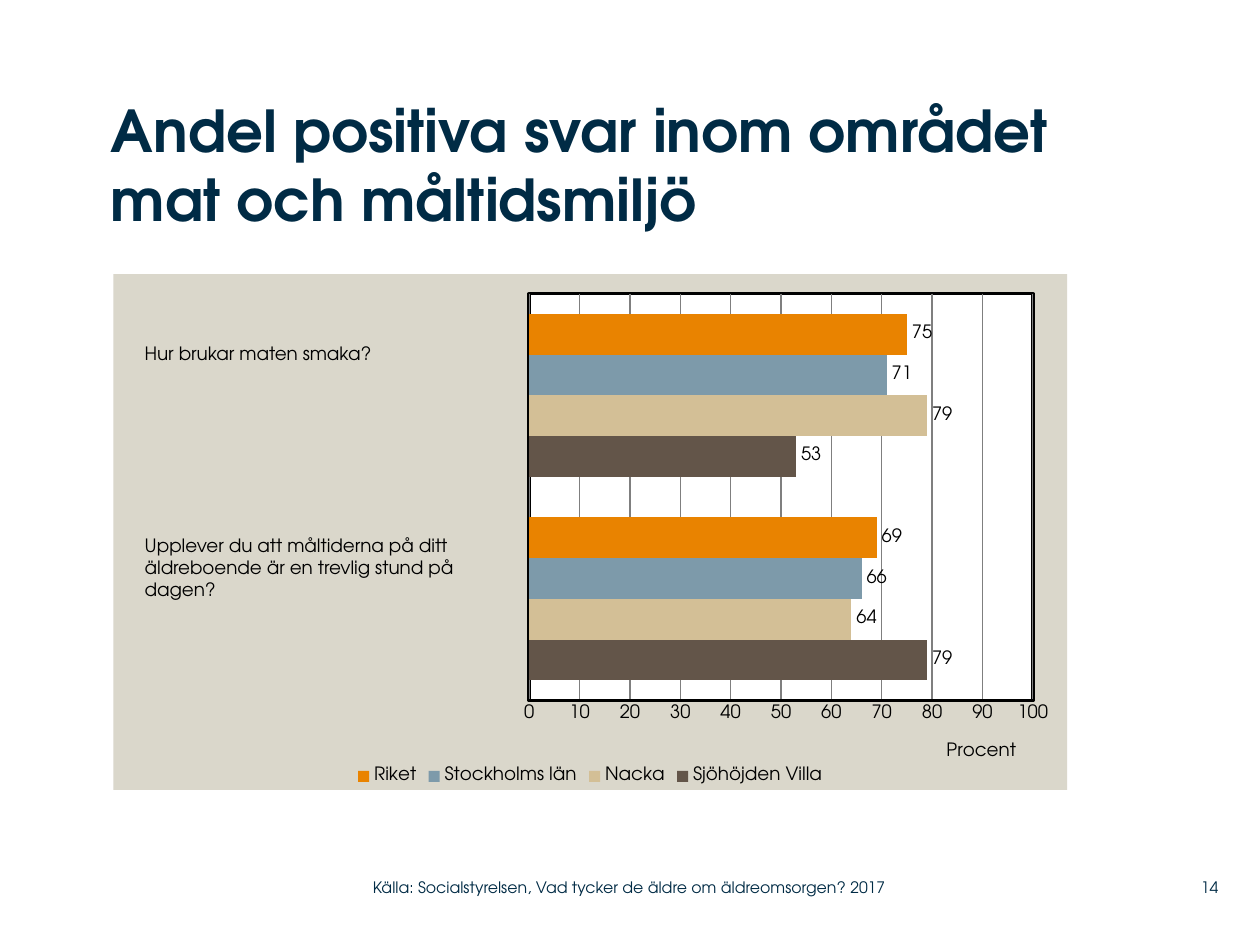
import pptx
import pptx.chart.data
import pptx.dml.color
import pptx.enum.chart
import pptx.enum.text
import pptx.oxml
import pptx.oxml.ns
import pptx.util

SLIDE_SIZE = (10, 7.5)

THEME = {
    "font": "TeX Gyre Adventor",
    "navy": "002B45",
    "black": "000000",
    "grid": "7F7F7F",
    "panel": "DAD7CB",
    "plot": "FFFFFF",
    "title_size": 33,
    "chart_size": 10.5,
    "footer_size": 9,
}

CATEGORIES = ["1", "2"]
SERIES = [
    ("Sjöhöjden Villa", (79, 53), "635549"),
    ("Nacka", (64, 79), "D3BF96"),
    ("Stockholms län", (66, 71), "7D9AAA"),
    ("Riket", (69, 75), "E98300"),
]
AXIS_TITLE = "Procent"
CHART_BOX = (0.09, 0.29, 0.757, 0.546)
PLOT_LAYOUT = {"x": 0.436, "y": 0.038, "w": 0.528, "h": 0.789}
AXIS_TITLE_LAYOUT = {"x": 0.87, "y": 0.9}

TITLE = {
    "text": "Andel positiva svar inom området mat och måltidsmiljö",
    "box": (0.088, 0.1, 0.842, 0.19),
    "size": "title_size", "color": "navy", "bold": True, "inset": 0,
}
QUESTIONS = [
    {"text": "Hur brukar maten smaka?", "box": (0.105, 0.356, 0.297, 0.037)},
    {"text": "Upplever du att måltiderna på ditt äldreboende är en trevlig stund på\ndagen?",
     "box": (0.105, 0.559, 0.293, 0.084)},
]
FOOTERS = [
    {"text": "14", "box": (0.92, 0.919, 0.047, 0.039),
     "align": pptx.enum.text.PP_ALIGN.RIGHT},
    {"text": "Källa: Socialstyrelsen, Vad tycker de äldre om äldreomsorgen? 2017",
     "box": (0.296, 0.919, 0.443, 0.039)},
]
FOOTER_STYLE = {"size": "footer_size", "color": "navy", "inset": 0,
                "anchor": pptx.enum.text.MSO_ANCHOR.MIDDLE}


def color(name):
    return pptx.dml.color.RGBColor.from_string(THEME.get(name, name))


def place(box):
    return [pptx.util.Inches(share * SLIDE_SIZE[index % 2])
            for index, share in enumerate(box)]


def style_font(font, size="chart_size", color_name="black", bold=False):
    font.name = THEME["font"]
    font.size = pptx.util.Pt(THEME[size])
    font.bold = bold
    font.color.rgb = color(color_name)


def add_text(slide, text, box, size="chart_size", color="black", bold=False,
             inset=None, anchor=pptx.enum.text.MSO_ANCHOR.TOP,
             align=pptx.enum.text.PP_ALIGN.LEFT):
    frame = slide.shapes.add_textbox(*place(box)).text_frame
    frame.word_wrap = True
    frame.vertical_anchor = anchor
    if inset is not None:
        frame.margin_left = frame.margin_right = pptx.util.Inches(inset)
        frame.margin_top = frame.margin_bottom = pptx.util.Inches(inset)
    frame.text = text
    for paragraph in frame.paragraphs:
        paragraph.alignment = align
        for run in paragraph.runs:
            style_font(run.font, size, color, bold)


def layout_xml(values, inner=False):
    target = '<c:layoutTarget val="inner"/>' if inner else ""
    modes = "".join(f'<c:{key}Mode val="edge"/>' for key in "xy")
    sizes = "".join(f'<c:{key} val="{value}"/>' for key, value in values.items())
    return pptx.oxml.parse_xml(
        f'<c:layout {pptx.oxml.ns.nsdecls("c")}><c:manualLayout>'
        f"{target}{modes}{sizes}</c:manualLayout></c:layout>")


def set_layout(parent, layout, index):
    for existing in parent.findall(pptx.oxml.ns.qn("c:layout")):
        parent.remove(existing)
    parent.insert(index, layout)


def area_properties(fill, outline):
    return pptx.oxml.parse_xml(
        f'<c:spPr {pptx.oxml.ns.nsdecls("c", "a")}>'
        f'<a:solidFill><a:srgbClr val="{THEME[fill]}"/></a:solidFill>{outline}</c:spPr>')


def style_areas(chart):
    space = chart._chartSpace
    plot_area = space.chart.plotArea
    set_layout(plot_area, layout_xml(PLOT_LAYOUT, inner=True), 0)
    border = (f'<a:ln w="{pptx.util.Pt(2)}"><a:solidFill>'
              f'<a:srgbClr val="{THEME["black"]}"/></a:solidFill></a:ln>')
    plot_area.append(area_properties("plot", border))
    space.chart.addnext(area_properties("panel", "<a:ln><a:noFill/></a:ln>"))


def style_value_axis(axis):
    axis.minimum_scale, axis.maximum_scale, axis.major_unit = 0, 100, 10
    axis.major_tick_mark = pptx.enum.chart.XL_TICK_MARK.NONE
    axis.minor_tick_mark = pptx.enum.chart.XL_TICK_MARK.NONE
    axis.format.line.color.rgb = color("black")
    axis.format.line.width = pptx.util.Pt(2)
    axis.has_major_gridlines = True
    axis.major_gridlines.format.line.color.rgb = color("grid")
    axis.major_gridlines.format.line.width = pptx.util.Pt(0.75)
    style_font(axis.tick_labels.font)
    frame = axis.axis_title.text_frame
    frame.text = AXIS_TITLE
    style_font(frame.paragraphs[0].runs[0].font)
    set_layout(axis.axis_title._element, layout_xml(AXIS_TITLE_LAYOUT), 1)


def add_answer_chart(slide):
    data = pptx.chart.data.CategoryChartData()
    data.categories = CATEGORIES
    for name, values, _ in SERIES:
        data.add_series(name, values)
    chart = slide.shapes.add_chart(
        pptx.enum.chart.XL_CHART_TYPE.BAR_CLUSTERED, *place(CHART_BOX), data).chart
    chart.has_title = False
    style_font(chart.font)
    chart.category_axis.visible = False
    style_value_axis(chart.value_axis)
    chart.has_legend = True
    chart.legend.position = pptx.enum.chart.XL_LEGEND_POSITION.BOTTOM
    chart.legend.include_in_layout = False
    style_font(chart.legend.font)
    plot = chart.plots[0]
    plot.gap_width, plot.overlap, plot.vary_by_categories = 100, 0, False
    for series, (_, _, fill) in zip(plot.series, SERIES):
        series.format.fill.solid()
        series.format.fill.fore_color.rgb = color(fill)
        labels = series.data_labels
        labels.show_value = True
        labels.position = pptx.enum.chart.XL_LABEL_POSITION.OUTSIDE_END
        style_font(labels.font)
    style_areas(chart)


def main():
    presentation = pptx.Presentation()
    presentation.slide_width, presentation.slide_height = map(pptx.util.Inches, SLIDE_SIZE)
    slide = presentation.slides.add_slide(presentation.slide_layouts[6])
    add_answer_chart(slide)
    add_text(slide, **TITLE)
    for question in QUESTIONS:
        add_text(slide, **question)
    for footer in FOOTERS:
        add_text(slide, **footer, **FOOTER_STYLE)
    presentation.save("out.pptx")


if __name__ == "__main__":
    main()
